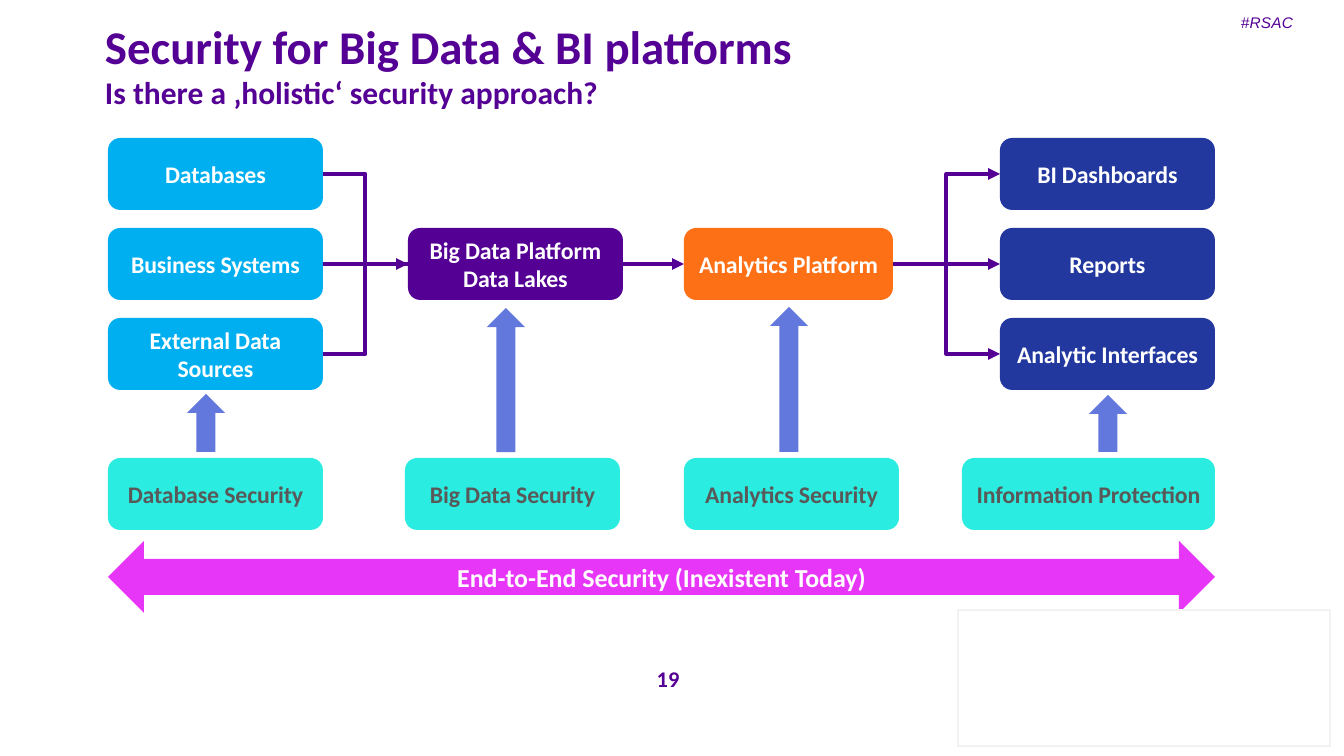
from lxml import etree
from pptx import Presentation
from pptx.dml.color import RGBColor
from pptx.enum.shapes import MSO_CONNECTOR, MSO_SHAPE
from pptx.enum.text import MSO_ANCHOR, PP_ALIGN
from pptx.oxml.ns import qn
from pptx.util import Emu, Pt

STRAIGHT, ELBOW = MSO_CONNECTOR.STRAIGHT, MSO_CONNECTOR.ELBOW
ROUNDED, RECTANGLE = MSO_SHAPE.ROUNDED_RECTANGLE, MSO_SHAPE.RECTANGLE
UP_ARROW, TWO_WAY_ARROW = MSO_SHAPE.UP_ARROW, MSO_SHAPE.LEFT_RIGHT_ARROW
LEFT, CENTER = PP_ALIGN.LEFT, PP_ALIGN.CENTER
TOP, MIDDLE = MSO_ANCHOR.TOP, MSO_ANCHOR.MIDDLE
LEFT_SIDE, RIGHT_SIDE = 1, 3

COLORS = {
    "purple": "550095", "source": "00AFF0", "analytics": "FD7015",
    "output": "22389F", "security": "2AECE1", "support": "6378DD",
    "end_to_end": "E736F7", "white": "FFFFFF", "gray": "595959",
    "frame": "F2F2F2",
}

HEADING = [("Security for Big Data & BI platforms", 33.5, 39.2),
           ("Is there a ‚holistic‘ security approach?", 22.5, 26.1)]
HASHTAG = "#RSAC"
PAGE = "19"
SOURCES = [["Databases"], ["Business Systems"], ["External Data", "Sources"]]
LAKE = ["Big Data Platform", "Data Lakes"]
ANALYTICS = ["Analytics Platform"]
OUTPUTS = [["BI Dashboards"], ["Reports"], ["Analytic Interfaces"]]
SECURITY = [("Database Security", 108, 215), ("Big Data Security", 405, 215),
            ("Analytics Security", 684, 215), ("Information Protection", 962, 253)]
SUPPORT_ARROWS = [(206, 394), (506, 308), (789, 307), (1108, 395)]
END_TO_END = "End-to-End Security (Inexistent Today)"

ROW_TOP, ROW_PITCH, BOX_W, BOX_H = 138, 90, 215, 72
LEFT_EDGE, RIGHT_EDGE = 108, 1215
SECURITY_TOP, SUPPORT_BOTTOM, SUPPORT_W = 458, 452, 38


def px(n):
    return Emu(round(n * 914400 / 100.8))


def color(name):
    return RGBColor.from_string(COLORS[name])


def set_frame(frame, anchor, wrap):
    frame.margin_left = frame.margin_right = 0
    frame.margin_top = frame.margin_bottom = 0
    frame.vertical_anchor = anchor
    frame.word_wrap = wrap


def add_run(paragraph, text, size, ink, bold=True, italic=False, font="Calibri", spacing=0):
    run = paragraph.add_run()
    run.text = text
    run.font.name, run.font.size = font, Pt(size)
    run.font.bold, run.font.italic = bold, italic
    run.font.color.rgb = color(ink)
    if spacing:
        run._r.get_or_add_rPr().set("spc", str(spacing))


def add_block(kind, x, y, w, h, fill):
    block = slide.shapes.add_shape(kind, px(x), px(y), px(w), px(h))
    block.shadow.inherit = False
    block.fill.solid()
    block.fill.fore_color.rgb = color(fill)
    block.line.fill.background()
    return block


def add_label(block, lines, size, ink, spacing=0):
    set_frame(block.text_frame, MIDDLE, True)
    paragraph = block.text_frame.paragraphs[0]
    paragraph.alignment = CENTER
    for i, line in enumerate(lines):
        if i:
            paragraph.add_line_break()
        add_run(paragraph, line, size, ink, spacing=spacing)


def add_box(lines, x, y, w, fill, ink="white"):
    box = add_block(ROUNDED, x, y, w, BOX_H, fill)
    box.adjustments[0] = 0.17
    add_label(box, lines, 17, ink, -10)
    return box


def add_text(x, y, w, h, alignment=LEFT):
    box = slide.shapes.add_textbox(px(x), px(y), px(w), px(h))
    set_frame(box.text_frame, TOP, True)
    box.text_frame.paragraphs[0].alignment = alignment
    return box.text_frame


def add_flow(start, end, arrow=True):
    start_y = start.top + start.height // 2
    end_y = end.top + end.height // 2
    kind = STRAIGHT if start_y == end_y else ELBOW
    flow = slide.shapes.add_connector(kind, start.left + start.width, start_y, end.left, end_y)
    flow.begin_connect(start, RIGHT_SIDE)
    flow.end_connect(end, LEFT_SIDE)
    flow.line.color.rgb = color("purple")
    flow.line.width = Pt(2.82)
    if arrow:
        etree.SubElement(flow.line._get_or_add_ln(), qn("a:tailEnd"), type="triangle")
    etree.SubElement(flow._element.spPr, qn("a:effectLst"))


prs = Presentation()
prs.slide_width, prs.slide_height = px(1344), px(756)
slide = prs.slides.add_slide(prs.slide_layouts[6])

add_run(add_text(1241, 13, 60, 22).paragraphs[0], HASHTAG, 11, "purple",
        bold=False, italic=True, font="Arial", spacing=10)

heading = add_text(105, 19, 699, 94)
for i, (text, size, leading) in enumerate(HEADING):
    paragraph = heading.add_paragraph() if i else heading.paragraphs[0]
    paragraph.line_spacing = Pt(leading)
    add_run(paragraph, text, size, "purple")

add_run(add_text(655, 665, 26, 30, CENTER).paragraphs[0], PAGE, 16, "purple", spacing=10)

rows = [ROW_TOP + ROW_PITCH * i for i in range(3)]
sources = [add_box(lines, LEFT_EDGE, y, BOX_W, "source") for lines, y in zip(SOURCES, rows)]
lake = add_box(LAKE, 408, rows[1], BOX_W, "purple")
analytics = add_box(ANALYTICS, 684, rows[1], 209, "analytics")
outputs = [add_box(lines, RIGHT_EDGE - BOX_W, y, BOX_W, "output")
           for lines, y in zip(OUTPUTS, rows)]

for i, source in enumerate(sources):
    add_flow(source, lake, arrow=i == 1)
add_flow(lake, analytics)
for output in outputs:
    add_flow(analytics, output)

for center, top in SUPPORT_ARROWS:
    add_block(UP_ARROW, center - SUPPORT_W // 2, top, SUPPORT_W, SUPPORT_BOTTOM - top, "support")
for text, x, w in SECURITY:
    add_box([text], x, SECURITY_TOP, w, "security", "gray")

end_to_end = add_block(TWO_WAY_ARROW, LEFT_EDGE, 541, RIGHT_EDGE - LEFT_EDGE, BOX_H, "end_to_end")
add_label(end_to_end, [END_TO_END], 18.5, "white")

empty_panel = add_block(RECTANGLE, 958, 610, 372, 136, "white")
empty_panel.line.color.rgb = color("frame")
empty_panel.line.width = Pt(2)

prs.save("out.pptx")
